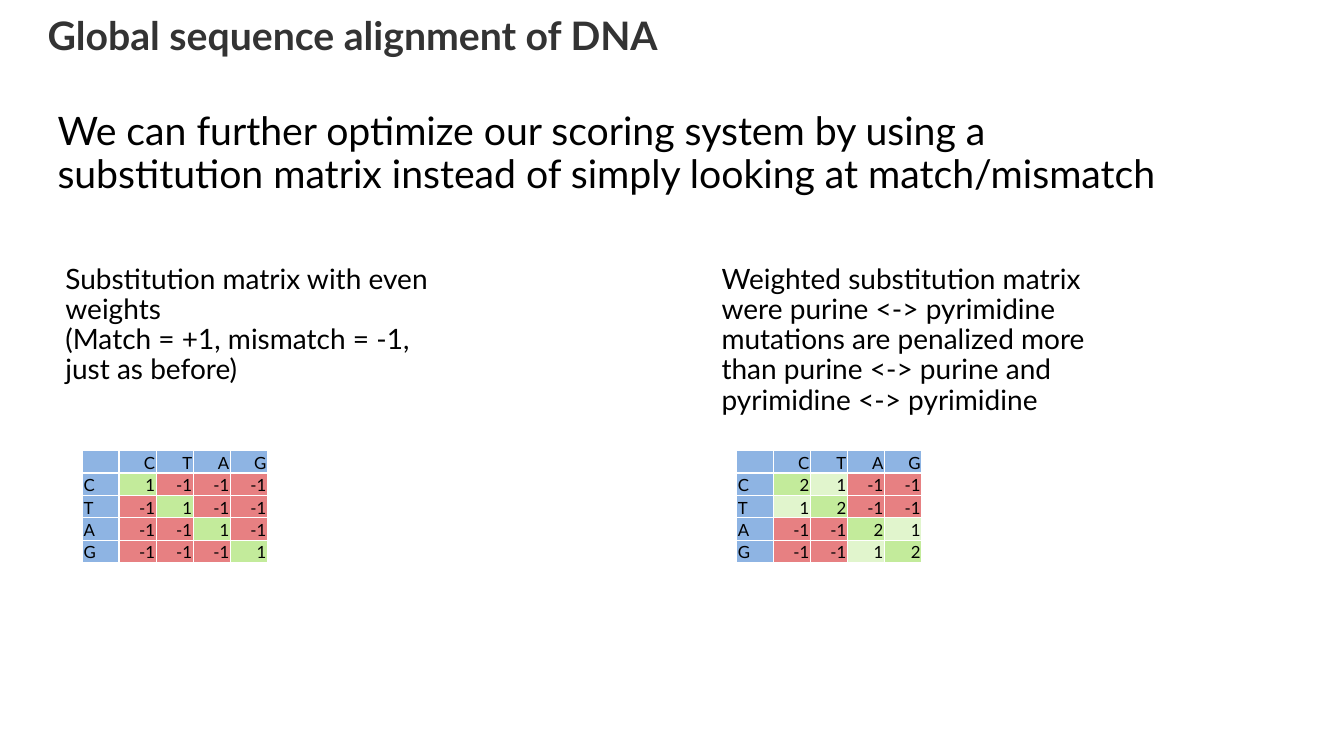
"""Build a slide comparing an even and a weighted DNA substitution matrix."""
import dataclasses

import pptx
import pptx.dml.color
import pptx.enum.text
import pptx.oxml
import pptx.oxml.ns
import pptx.util

Pt = pptx.util.Pt
Align = pptx.enum.text.PP_ALIGN
Anchor = pptx.enum.text.MSO_ANCHOR
AutoSize = pptx.enum.text.MSO_AUTO_SIZE

BASES = "CTAG"
HEADER, MATCH, TRANSITION, MISMATCH = "8EB4E3", "C3EB9B", "E1F5CD", "E78082"
BORDER = "FFFFFF"
ROW_HEIGHT, LABEL_WIDTH, SCORE_WIDTH = 16, 26, 26.5
MATRIX_TOP, CAPTION_TOP, CAPTION_WIDTH = 321.84, 185.76, 282.24


@dataclasses.dataclass(frozen=True)
class Box:
    left: float
    top: float
    width: float
    height: float

    def lengths(self) -> list:
        return [Pt(value) for value in dataclasses.astuple(self)]


@dataclasses.dataclass(frozen=True)
class Scoring:
    matrix_left: float
    caption_left: float
    caption_height: float
    caption: list[str]
    match: int
    transition: int
    transversion: int

    def score(self, row: int, column: int) -> int:
        if row == column:
            return self.match
        return self.transition if row // 2 == column // 2 else self.transversion


SCORINGS = [
    Scoring(59.04, 39.6, 94.32,
            ["Substitution matrix with even weights",
             "(Match = +1, mismatch = -1, just as before)"], 1, -1, -1),
    Scoring(526.32, 508.32, 116.64,
            ["Weighted substitution matrix were purine <-> pyrimidine mutations "
             "are penalized more than purine <-> purine and pyrimidine <-> pyrimidine"],
            2, 1, -1),
]


def colour(value: str) -> pptx.dml.color.RGBColor:
    return pptx.dml.color.RGBColor.from_string(value)


def apply(target, formats: dict) -> None:
    for name, value in formats.items():
        setattr(target, name, value)


def write(frame, paragraphs: list[str], size: float, text_colour: str = "000000",
          bold: bool = False, align=Align.LEFT) -> None:
    frame.text = "\n".join(paragraphs)
    for paragraph in frame.paragraphs:
        apply(paragraph, {"alignment": align, "line_spacing": 0.9})
        for run in paragraph.runs:
            apply(run.font, {"size": Pt(size), "name": "Lato", "bold": bold})
            run.font.color.rgb = colour(text_colour)


def add_text(slide, box: Box, paragraphs: list[str], size: float) -> None:
    frame = slide.shapes.add_textbox(*box.lengths()).text_frame
    apply(frame, {"word_wrap": True, "auto_size": AutoSize.SHAPE_TO_FIT_TEXT})
    write(frame, paragraphs, size)


def add_borders(cell) -> None:
    properties = cell._tc.get_or_add_tcPr()
    for position, side in enumerate(("lnL", "lnR", "lnT", "lnB")):
        properties.insert(position, pptx.oxml.parse_xml(
            f'<a:{side} {pptx.oxml.ns.nsdecls("a")} w="{Pt(1)}"><a:solidFill>'
            f'<a:srgbClr val="{BORDER}"/></a:solidFill></a:{side}>'))


def fill_cell(cell, text: str, fill: str, align) -> None:
    cell.fill.solid()
    cell.fill.fore_color.rgb = colour(fill)
    apply(cell, {"vertical_anchor": Anchor.BOTTOM, "margin_left": Pt(0.72),
                 "margin_right": Pt(0.72), "margin_top": Pt(0.72), "margin_bottom": 0})
    add_borders(cell)
    if text:
        write(cell.text_frame, [text], 12, align=align)
    else:
        cell.text_frame.paragraphs[0]._p.append(pptx.oxml.parse_xml(
            f'<a:endParaRPr {pptx.oxml.ns.nsdecls("a")} sz="1200"/>'))


def add_matrix(slide, scoring: Scoring) -> None:
    count = len(BASES) + 1
    box = Box(scoring.matrix_left, MATRIX_TOP,
              LABEL_WIDTH + SCORE_WIDTH * len(BASES), ROW_HEIGHT * count)
    matrix = slide.shapes.add_table(count, count, *box.lengths()).table
    apply(matrix, {"first_row": False, "horz_banding": False})
    for index, column in enumerate(matrix.columns):
        column.width = Pt(SCORE_WIDTH if index else LABEL_WIDTH)
    fills = {scoring.transversion: MISMATCH, scoring.match: MATCH}
    fill_cell(matrix.cell(0, 0), "", HEADER, Align.LEFT)
    for row, base in enumerate(BASES):
        fill_cell(matrix.cell(0, row + 1), base, HEADER, Align.RIGHT)
        fill_cell(matrix.cell(row + 1, 0), base, HEADER, Align.LEFT)
        for column in range(len(BASES)):
            score = scoring.score(row, column)
            fill_cell(matrix.cell(row + 1, column + 1), str(score),
                      fills.get(score, TRANSITION), Align.RIGHT)


def add_title(slide, box: Box, text: str) -> None:
    title = slide.shapes.title
    apply(title, dict(zip(("left", "top", "width", "height"), box.lengths())))
    apply(title.text_frame, {"margin_left": 0, "margin_top": 0, "margin_right": 0,
                             "margin_bottom": 0, "vertical_anchor": Anchor.TOP,
                             "auto_size": AutoSize.NONE, "word_wrap": True})
    write(title.text_frame, [text], 28, "333333", bold=True)


def main() -> None:
    deck = pptx.Presentation()
    apply(deck, {"slide_width": Pt(960), "slide_height": Pt(540)})
    slide = deck.slides.add_slide(deck.slide_layouts[5])
    add_title(slide, Box(34, 11.5, 812, 65), "Global sequence alignment of DNA")
    add_text(slide, Box(34, 76.32, 824.4, 68.4),
             ["We can further optimize our scoring system by using a substitution "
              "matrix instead of simply looking at match/mismatch"], 28)
    for scoring in SCORINGS:
        add_matrix(slide, scoring)
        add_text(slide, Box(scoring.caption_left, CAPTION_TOP, CAPTION_WIDTH,
                            scoring.caption_height), scoring.caption, 20)
    deck.save("out.pptx")


if __name__ == "__main__":
    main()
